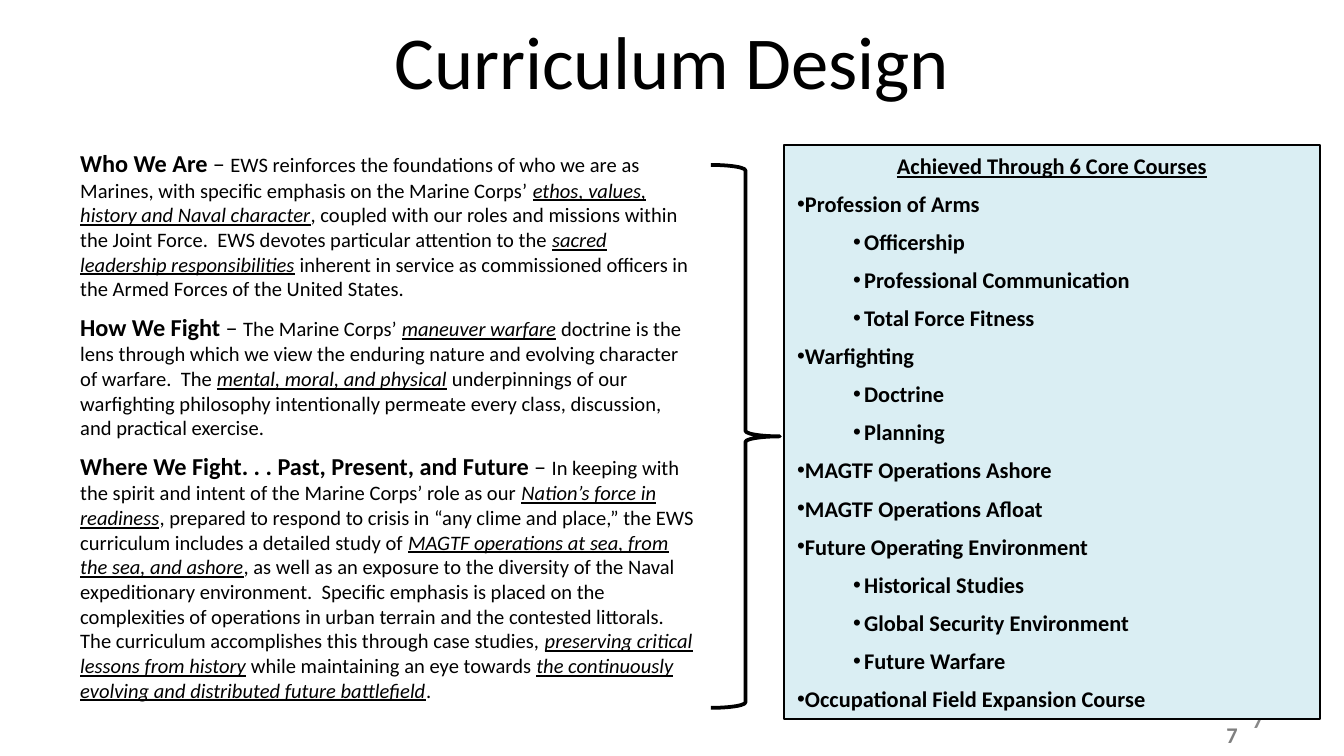
"""Build the Curriculum Design slide."""
import pptx
import pptx.util
import pptx.dml.color
import pptx.enum.shapes
import pptx.enum.text
import pptx.oxml.ns
import lxml.etree

PX = 914400 / 134.4
COLORS = {"text": "000000", "panel": "DAEEF3", "gray": "898989", "dark gray": "7F7F7F"}
ALIGN = pptx.enum.text.PP_ALIGN
ANCHOR = pptx.enum.text.MSO_ANCHOR
SHAPE = pptx.enum.shapes.MSO_SHAPE


def px(*lengths):
    return [pptx.util.Emu(round(length * PX)) for length in lengths]


def set_font(font, size, color="text", bold=False):
    font.name = "Calibri"
    font.size = pptx.util.Pt(size)
    font.bold = bold
    font.color.rgb = pptx.dml.color.RGBColor.from_string(COLORS[color])


presentation = pptx.Presentation()
presentation.slide_width, presentation.slide_height = px(1344, 756)
slide = presentation.slides.add_slide(presentation.slide_layouts[6])

labels = [
    ("7", (964, 700, 313, 40), ANCHOR.MIDDLE, ALIGN.RIGHT, 12, "gray", True),
    ("Curriculum Design", (67, -3, 1210, 126), ANCHOR.MIDDLE, ALIGN.CENTER, 40, "text", False),
    ("7", (949, 715, 302, 40), ANCHOR.BOTTOM, ALIGN.RIGHT, 12, "dark gray", True),
]
for text, box, anchor, alignment, size, color, bold in labels:
    label = slide.shapes.add_textbox(*px(*box))
    label.text_frame.word_wrap = True
    label.text_frame.vertical_anchor = anchor
    paragraph = label.text_frame.paragraphs[0]
    paragraph.text = text
    paragraph.alignment = alignment
    set_font(paragraph.font, size, color, bold)

themes = [
    ("Who We Are", [
        "EWS reinforces the foundations of who we are as Marines, with specific emphasis on the Marine Corps’ ",
        "ethos, values, history and Naval character",
        ", coupled with our roles and missions within the Joint Force.  EWS devotes particular attention to the ",
        "sacred leadership responsibilities",
        " inherent in service as commissioned officers in the Armed Forces of the United States.",
    ]),
    ("How We Fight", [
        "The Marine Corps’ ",
        "maneuver warfare",
        " doctrine is the lens through which we view the enduring nature and evolving character of warfare.  The ",
        "mental, moral, and physical",
        " underpinnings of our warfighting philosophy intentionally permeate every class, discussion, "
        "and practical exercise.",
    ]),
    ("Where We Fight. . . Past, Present, and Future", [
        "In keeping with the spirit and intent of the Marine Corps’ role as our ",
        "Nation’s force in readiness",
        ", prepared to respond to crisis in “any clime and place,” the EWS curriculum includes a detailed study of ",
        "MAGTF operations at sea, from the sea, and ashore",
        ", as well as an exposure to the diversity of the Naval expeditionary environment.  Specific emphasis is "
        "placed on the complexities of operations in urban terrain and the contested littorals.  The curriculum "
        "accomplishes this through case studies, ",
        "preserving critical lessons from history",
        " while maintaining an eye towards ",
        "the continuously evolving and distributed future battlefield",
        ".",
    ]),
]
body = slide.shapes.add_textbox(*px(67, 142, 644, 499))
body.text_frame.word_wrap = True
for index, (heading, passages) in enumerate(themes):
    paragraph = body.text_frame.add_paragraph() if index else body.text_frame.paragraphs[0]
    if index:
        paragraph.space_before = pptx.util.Pt(6)
    for text, bold in ((heading, True), (" – ", False)):
        run = paragraph.add_run()
        run.text = text
        set_font(run.font, 13, bold=bold)
    for position, text in enumerate(passages):
        run = paragraph.add_run()
        run.text = text
        set_font(run.font, 11)
        run.font.italic = run.font.underline = position % 2 == 1

brace = slide.shapes.add_shape(SHAPE.RIGHT_BRACE, *px(711, 165, 69, 543))
brace.adjustments[0] = 0.08
brace.adjustments[1] = 0.5
brace.fill.background()
panel = slide.shapes.add_shape(SHAPE.RECTANGLE, *px(784, 145, 536, 574))
panel.fill.solid()
panel.fill.fore_color.rgb = pptx.dml.color.RGBColor.from_string(COLORS["panel"])
for shape, width in ((brace, 2), (panel, 1)):
    shape.shadow.inherit = False
    shape.line.width = pptx.util.Pt(width)
    shape.line.color.rgb = pptx.dml.color.RGBColor.from_string(COLORS["text"])

courses = [
    ("Profession of Arms", ["Officership", "Professional Communication", "Total Force Fitness"]),
    ("Warfighting", ["Doctrine", "Planning"]),
    ("MAGTF Operations Ashore", []),
    ("MAGTF Operations Afloat", []),
    ("Future Operating Environment", ["Historical Studies", "Global Security Environment", "Future Warfare"]),
    ("Occupational Field Expansion Course", []),
]
panel.text_frame.word_wrap = True
panel.text_frame.vertical_anchor = ANCHOR.MIDDLE
paragraph = panel.text_frame.paragraphs[0]
paragraph.text = "Achieved Through 6 Core Courses"
paragraph.alignment = ALIGN.CENTER
set_font(paragraph.font, 12, bold=True)
paragraph.font.underline = True
for course, topics in courses:
    for level, text in [(0, course)] + [(1, topic) for topic in topics]:
        paragraph = panel.text_frame.add_paragraph()
        paragraph.text = text
        paragraph.level = level
        paragraph.alignment = ALIGN.LEFT
        paragraph.space_before = pptx.util.Pt(6)
        properties = paragraph._p.get_or_add_pPr()
        margin, indent = px(67 * level, -11)
        properties.set("marL", str(margin))
        properties.set("indent", str(indent))
        bullet_color = lxml.etree.SubElement(properties, pptx.oxml.ns.qn("a:buClr"))
        lxml.etree.SubElement(bullet_color, pptx.oxml.ns.qn("a:srgbClr"), val=COLORS["text"])
        lxml.etree.SubElement(properties, pptx.oxml.ns.qn("a:buFont"), typeface="Arial")
        lxml.etree.SubElement(properties, pptx.oxml.ns.qn("a:buChar"), char="•")
        set_font(paragraph.font, 12, bold=True)

presentation.save("out.pptx")
